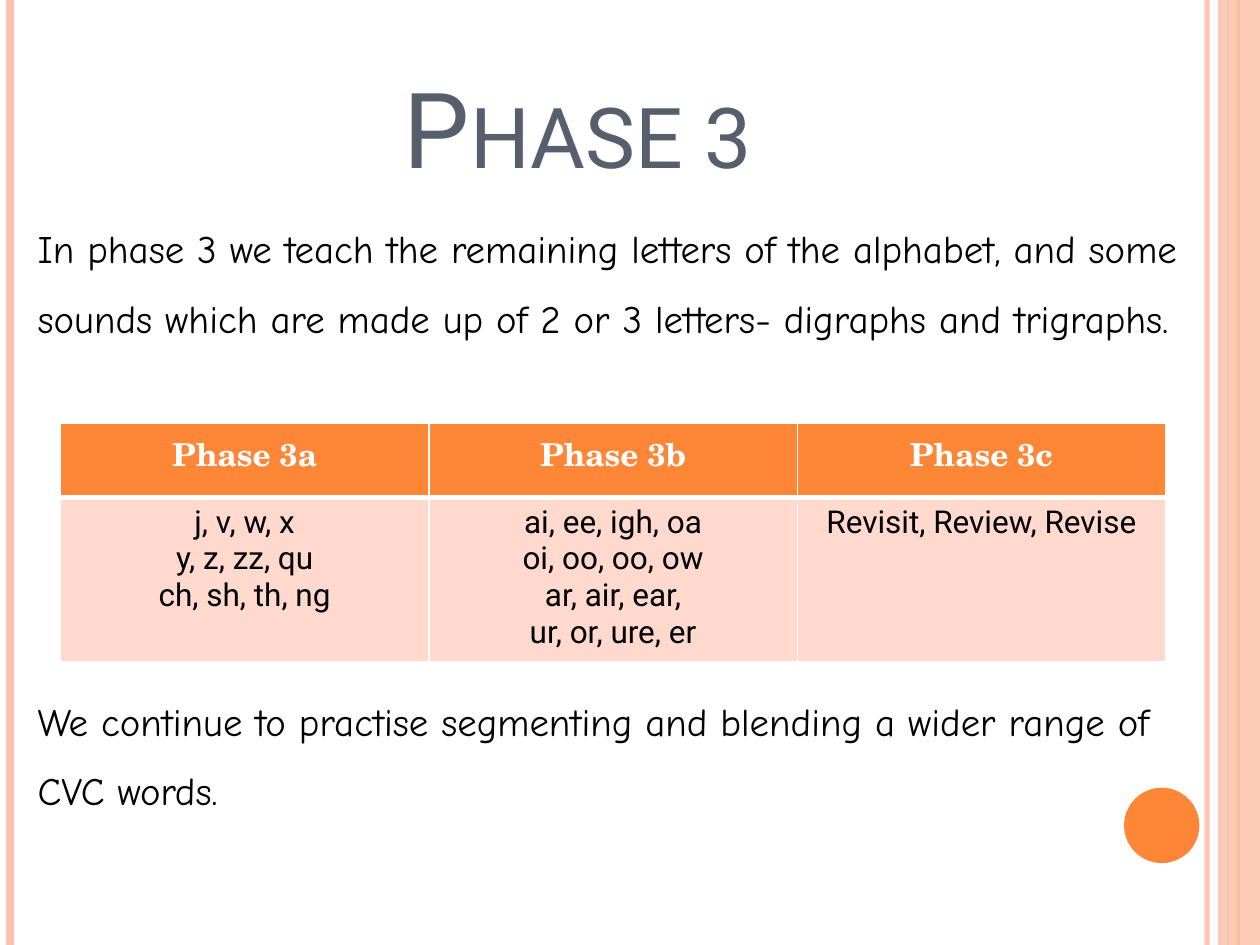
"""Build the Phase 3 phonics slide."""
from lxml import etree
from pptx import Presentation
from pptx.dml.color import RGBColor
from pptx.enum.shapes import MSO_CONNECTOR, MSO_SHAPE
from pptx.enum.text import MSO_ANCHOR, PP_ALIGN
from pptx.oxml.ns import qn
from pptx.util import Cm, Pt

LINE, RECT, OVAL = MSO_CONNECTOR.STRAIGHT, MSO_SHAPE.RECTANGLE, MSO_SHAPE.OVAL
CENTER, LEFT, TOP, BOTTOM = PP_ALIGN.CENTER, PP_ALIGN.LEFT, MSO_ANCHOR.TOP, MSO_ANCHOR.BOTTOM

THEME = {
    "orange": "FE8637", "peach": "FEC3AE", "pale": "FFD9CE",
    "slate": "575F6D", "black": "000000", "white": "FFFFFF",
    "title": ("Roboto", 60), "body": ("Comic Neue", 22.2),
    "head": ("TeX Gyre Schola", 18), "cell": ("Roboto", 18),
}
WIDTH, HEIGHT = 25.4, 19.05

TITLE = "Phase 3"
NOTES = [
    (3.94, "In phase 3 we teach the remaining letters of the alphabet, and some "
           "sounds which are made up of 2 or 3 letters- digraphs and trigraphs."),
    (13.46, "We continue to practise segmenting and blending a wider range of CVC words."),
]
PHASES = [
    ("Phase 3a", ["j, v, w, x", "y, z, zz, qu", "ch, sh, th, ng"]),
    ("Phase 3b", ["ai, ee, igh, oa", "oi, oo, oo, ow", "ar, air, ear,", "ur, or, ure, er"]),
    ("Phase 3c", ["Revisit, Review, Revise"]),
]
RULES = [
    (24.33, "peach", 3, 93), (0.2, "peach", 4.5, 100),
    (24.97, "orange", 1.5, 100), (24.77, "orange", 0.75, 100),
]
SHAPES = [
    (RECT, (24.55, 0, 0.85, HEIGHT), "peach", 87),
    (OVAL, (22.66, 15.88, 1.52, 1.52), "orange", 100),
]


def tint(name):
    return RGBColor.from_string(THEME[name])


def fade(item, alpha):
    if alpha < 100:
        color = next(item.element.spPr.iter(qn("a:srgbClr")))
        etree.SubElement(color, qn("a:alpha"), val=str(alpha * 1000))


def write(frame, lines, style, color, align=LEFT, bold=False):
    for i, line in enumerate(lines):
        para = frame.paragraphs[0] if i == 0 else frame.add_paragraph()
        para.text, para.alignment = line, align
        font = para.font
        font.name, size = THEME[style]
        font.size, font.bold = Pt(size), bold
        font.color.rgb = tint(color)


def add_rule(slide, x, color, width, alpha):
    rule = slide.shapes.add_connector(LINE, Cm(x), 0, Cm(x), Cm(HEIGHT))
    rule.line.color.rgb, rule.line.width = tint(color), Pt(width)
    etree.SubElement(rule.element.spPr, qn("a:effectLst"))
    fade(rule, alpha)


def add_shape(slide, kind, box, color, alpha):
    shape = slide.shapes.add_shape(kind, *map(Cm, box))
    shape.shadow.inherit = False
    shape.fill.solid()
    shape.fill.fore_color.rgb = tint(color)
    shape.line.fill.background()
    fade(shape, alpha)


def add_title(slide):
    title = slide.shapes.title
    title.left, title.top, title.width, title.height = map(Cm, (1.27, 0.76, 20.75, 3.18))
    frame = title.text_frame
    frame.vertical_anchor = BOTTOM
    write(frame, [TITLE], "title", "slate", CENTER)
    frame.paragraphs[0].runs[0].font._element.set("cap", "small")


def add_note(slide, top, text):
    frame = slide.shapes.add_textbox(Cm(0.51), Cm(top), Cm(23.6), Cm(3.8)).text_frame
    frame.word_wrap = True
    write(frame, [text], "body", "black")
    para = frame.paragraphs[0]
    para.line_spacing, para.space_before = 1.5, Pt(6)


def add_cell(cell, lines, style, color, fill, bold, edges):
    props = cell._tc.get_or_add_tcPr()
    for side, width in zip("LRTB", edges):
        edge = etree.SubElement(props, qn("a:ln" + side), w=str(Pt(width)))
        solid = etree.SubElement(edge, qn("a:solidFill"))
        etree.SubElement(solid, qn("a:srgbClr"), val=THEME["white"])
    cell.fill.solid()
    cell.fill.fore_color.rgb = tint(fill)
    cell.vertical_anchor = TOP
    write(cell.text_frame, lines, style, color, CENTER, bold)


def add_grid(slide):
    box = map(Cm, (1.22, 8.53, 22.28, 4.73))
    table = slide.shapes.add_table(2, len(PHASES), *box).table
    for row, tall in zip(table.rows, (1.5, 3.23)):
        row.height = Cm(tall)
    for col, (head, sounds) in enumerate(PHASES):
        add_cell(table.cell(0, col), [head], "head", "white", "orange", True, (1, 1, 1, 3))
        add_cell(table.cell(1, col), sounds, "cell", "black", "pale", False, (1, 1, 3, 1))


def main():
    deck = Presentation()
    deck.slide_width, deck.slide_height = Cm(WIDTH), Cm(HEIGHT)
    slide = deck.slides.add_slide(deck.slide_layouts[5])
    for rule in RULES:
        add_rule(slide, *rule)
    for shape in SHAPES:
        add_shape(slide, *shape)
    add_title(slide)
    for note in NOTES:
        add_note(slide, *note)
    add_grid(slide)
    deck.save("out.pptx")


if __name__ == "__main__":
    main()
